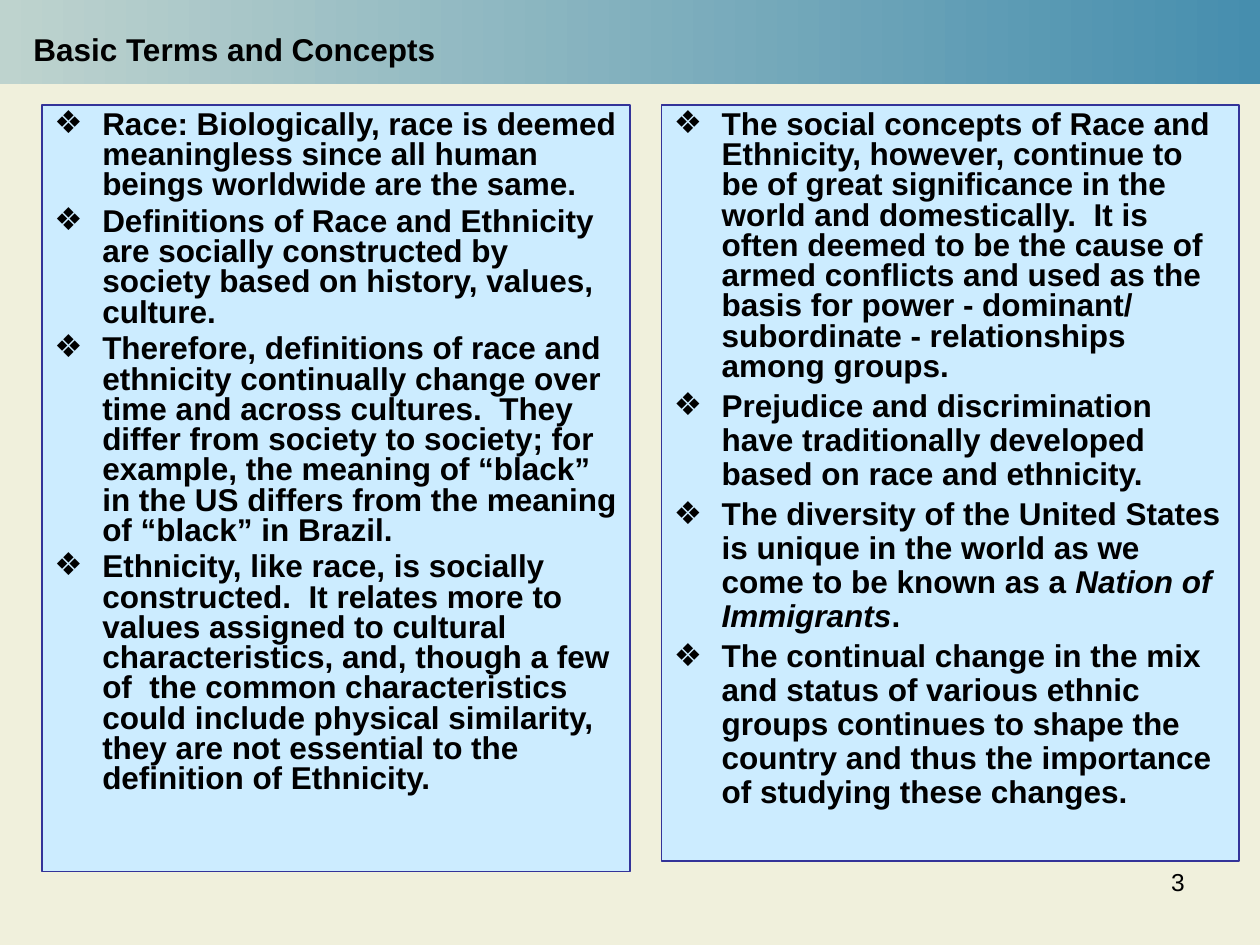
from lxml import etree
from pptx import Presentation
from pptx.dml.color import RGBColor
from pptx.enum.shapes import MSO_SHAPE
from pptx.enum.text import MSO_ANCHOR, PP_ALIGN
from pptx.oxml.ns import qn
from pptx.util import Inches, Pt

RECTANGLE = MSO_SHAPE.RECTANGLE
TOP, MIDDLE = MSO_ANCHOR.TOP, MSO_ANCHOR.MIDDLE
LEFT, RIGHT = PP_ALIGN.LEFT, PP_ALIGN.RIGHT

CREAM = RGBColor(0xF0, 0xF0, 0xDC)
BANNER_LEFT = RGBColor(0xBE, 0xD3, 0xCE)
BANNER_RIGHT = RGBColor(0x46, 0x8E, 0xAE)
PALE_BLUE = RGBColor(0xCC, 0xEC, 0xFF)
NAVY = RGBColor(0x33, 0x33, 0x99)
BLACK = RGBColor(0, 0, 0)

UNIT = Inches(1) / 12  # grid of 120 columns by 90 rows
INDENT = Inches(0.38)

# Each panel: grid box, then paragraphs as (line spacing, runs); odd runs are italic
PANELS = [
    ((4, 10, 56, 73), [
        (0.8, ["Race: Biologically, race is deemed meaningless since all human beings "
               "worldwide are the same."]),
        (0.8, ["Definitions of Race and Ethnicity are socially constructed by society "
               "based on history, values, culture."]),
        (0.8, ["Therefore, definitions of race and ethnicity continually change over time "
               "and across cultures.  They differ from society to society; for example, "
               "the meaning of “black” in the US differs from the meaning of “black” "
               "in Brazil."]),
        (0.8, ["Ethnicity, like race, is socially constructed.  It relates more to values "
               "assigned to cultural characteristics, and, though a few of  the common "
               "characteristics could include physical similarity, they are not essential "
               "to the definition of Ethnicity."]),
    ]),
    ((63, 10, 55, 72), [
        (0.8, ["The social concepts of Race and Ethnicity, however, continue to be of great "
               "significance in the world and domestically.  It is often deemed to be the "
               "cause of armed conflicts and used as the basis for power - dominant/ "
               "subordinate - relationships among groups."]),
        (0.9, ["Prejudice and discrimination have traditionally developed based on race "
               "and ethnicity."]),
        (0.9, ["The diversity of the United States is unique in the world as we come to be "
               "known as a ", "Nation of Immigrants", "."]),
        (0.9, ["The continual change in the mix and status of various ethnic groups "
               "continues to shape the country and thus the importance of studying "
               "these changes."]),
    ]),
]


def grid_box(column, row, columns, rows):
    """Return left, top, width and height for a box given in grid units."""
    return [round(value * UNIT) for value in (column, row, columns, rows)]


def format_font(font, size, bold):
    font.name = "Arial"
    font.size = Pt(size)
    font.bold = bold
    font.color.rgb = BLACK


presentation = Presentation()
presentation.slide_width = Inches(10)
presentation.slide_height = Inches(7.5)
slide = presentation.slides.add_slide(presentation.slide_layouts[6])
slide.background.fill.solid()
slide.background.fill.fore_color.rgb = CREAM

banner = slide.shapes.add_shape(RECTANGLE, *grid_box(0, 0, 120, 8))
banner.shadow.inherit = False
banner.line.fill.background()
banner.fill.gradient()
banner.fill.gradient_angle = 0
for stop, color in zip(banner.fill.gradient_stops, (BANNER_LEFT, BANNER_RIGHT)):
    stop.color.rgb = color

for text, box, size, bold, alignment, anchor in [
    ("3", (86, 82, 28, 6.25), 14, False, RIGHT, TOP),
    ("Basic Terms and Concepts", (2, 2, 41, 5.4), 18, True, LEFT, MIDDLE),
]:
    text_box = slide.shapes.add_textbox(*grid_box(*box))
    text_frame = text_box.text_frame
    text_frame.word_wrap = True
    text_frame.vertical_anchor = anchor
    text_frame.text = text
    paragraph = text_frame.paragraphs[0]
    paragraph.alignment = alignment
    format_font(paragraph.runs[0].font, size, bold)

for box, paragraphs in PANELS:
    panel = slide.shapes.add_shape(RECTANGLE, *grid_box(*box))
    panel.shadow.inherit = False
    panel.fill.solid()
    panel.fill.fore_color.rgb = PALE_BLUE
    panel.line.color.rgb = NAVY
    panel.line.width = Pt(0.75)
    text_frame = panel.text_frame
    text_frame.word_wrap = True
    text_frame.vertical_anchor = TOP
    for index, (line_spacing, runs) in enumerate(paragraphs):
        paragraph = text_frame.add_paragraph() if index else text_frame.paragraphs[0]
        paragraph.alignment = LEFT
        paragraph.line_spacing = line_spacing
        paragraph.space_before = Pt(3.6)
        properties = paragraph._p.get_or_add_pPr()
        properties.set("marL", str(INDENT))
        properties.set("indent", str(-INDENT))
        etree.SubElement(properties, qn("a:buFont"), typeface="Arial")
        etree.SubElement(properties, qn("a:buChar"), char="❖")
        for position, text in enumerate(runs):
            run = paragraph.add_run()
            run.text = text
            format_font(run.font, 18, True)
            run.font.italic = position % 2 == 1

presentation.save("out.pptx")
